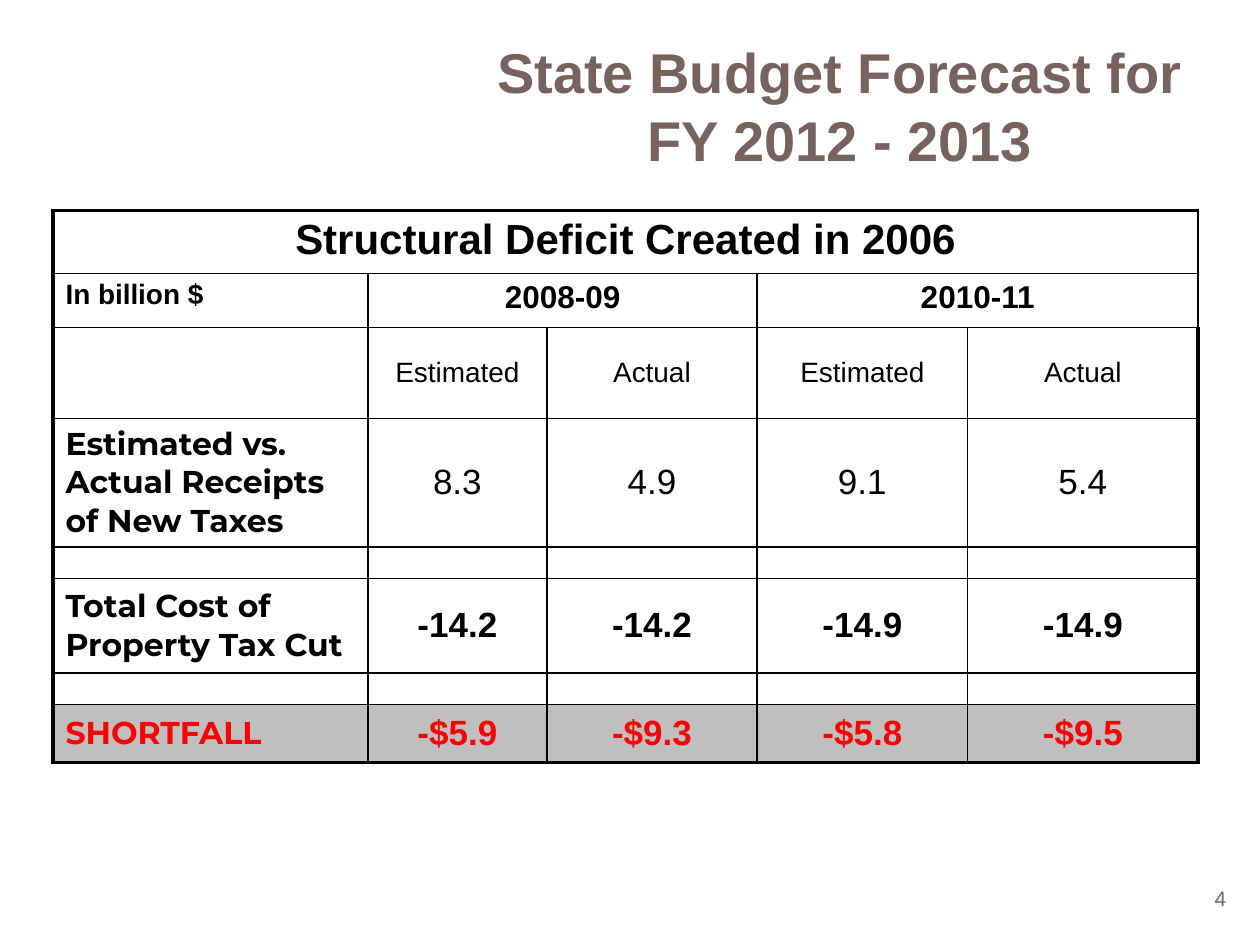
from lxml import etree
from pptx import Presentation
from pptx.dml.color import RGBColor
from pptx.enum.text import MSO_ANCHOR, PP_ALIGN
from pptx.oxml.ns import qn
from pptx.util import Inches, Pt

LEFT, CENTER, RIGHT = PP_ALIGN.LEFT, PP_ALIGN.CENTER, PP_ALIGN.RIGHT
TOP, MIDDLE = MSO_ANCHOR.TOP, MSO_ANCHOR.MIDDLE
BROWN, BLACK, RED, GRAY = "78625E", "000000", "FF0000", "BFBFBF"
THIN, THICK = 1, 2.25

TITLE = "State Budget Forecast for\vFY 2012 - 2013"
PAGE_NUMBER = "4"
ROWS = [
    ["Structural Deficit Created in 2006", "", "", "", ""],
    ["In billion $", "2008-09", "", "2010-11", ""],
    ["", "Estimated", "Actual", "Estimated", "Actual"],
    ["Estimated vs. Actual Receipts of New Taxes", "8.3", "4.9", "9.1", "5.4"],
    [""] * 5,
    ["Total Cost of Property Tax Cut", "-14.2", "-14.2", "-14.9", "-14.9"],
    [""] * 5,
    ["SHORTFALL", "-$5.9", "-$9.3", "-$5.8", "-$9.5"],
]
MERGES = [((0, 0), (0, 4)), ((1, 1), (1, 2)), ((1, 3), (1, 4))]
COLUMN_WIDTHS = [2.5, 1.42, 1.67, 1.67, 1.83]
ROW_HEIGHTS = [0.47, 0.43, 0.72, 1.02, 0.25, 0.75, 0.25, 0.46]
LAST_ROW, LAST_COLUMN = len(ROWS) - 1, len(COLUMN_WIDTHS) - 1
VALUE_SIZES = [24, 18, 16, 20, 20, 20, 20, 20]
LABEL_SIZES = [24, 16, 16, 18, 18, 18, 18, 18]
REGULAR_ROWS = (2, 3)
EMPTY_SIZE = 8


def color(value):
    return RGBColor.from_string(value)


def write(text_frame, text, size, shade, font="Arial", bold=False, align=LEFT):
    text_frame.text = text
    paragraph = text_frame.paragraphs[0]
    paragraph.alignment = align
    for run in paragraph.runs:
        run.font.name = font
        run.font.size = Pt(size)
        run.font.bold = bold
        run.font.color.rgb = color(shade)
    if not text:
        etree.SubElement(paragraph._p, qn("a:endParaRPr"), sz=str(EMPTY_SIZE * 100))


def add_text(slide, box, anchor, *style, **options):
    text_frame = slide.shapes.add_textbox(*map(Inches, box)).text_frame
    text_frame.word_wrap = True
    text_frame.vertical_anchor = anchor
    write(text_frame, *style, **options)


def set_borders(cell, row, column):
    outer = {"L": column == 0, "R": column == LAST_COLUMN,
             "T": row == 0, "B": row == LAST_ROW}
    properties = cell._tc.get_or_add_tcPr()
    for position, (side, is_outer) in enumerate(outer.items()):
        width = Pt(THICK if is_outer else THIN)
        line = etree.Element(qn(f"a:ln{side}"), w=str(int(width)))
        fill = etree.SubElement(line, qn("a:solidFill"))
        etree.SubElement(fill, qn("a:srgbClr"), val=BLACK)
        properties.insert(position, line)


def fill_cell(cell, row, column, text):
    is_label = column == 0 and row > 0
    write(
        cell.text_frame, text,
        (LABEL_SIZES if is_label else VALUE_SIZES)[row],
        RED if row == LAST_ROW else BLACK,
        font="Montserrat" if is_label and row > 2 else "Arial",
        bold=is_label or row not in REGULAR_ROWS,
        align=LEFT if is_label else CENTER,
    )
    cell.vertical_anchor = MIDDLE if row > 1 else TOP
    if row == LAST_ROW:
        cell.fill.solid()
        cell.fill.fore_color.rgb = color(GRAY)
    else:
        cell.fill.background()
    set_borders(cell, row, column)


def add_budget_table(slide):
    table = slide.shapes.add_table(
        len(ROWS), len(COLUMN_WIDTHS), Inches(0.42), Inches(1.67),
        Inches(sum(COLUMN_WIDTHS)), Inches(sum(ROW_HEIGHTS))).table
    table.first_row = table.horz_banding = False
    for column, width in zip(table.columns, COLUMN_WIDTHS):
        column.width = Inches(width)
    for row, height in zip(table.rows, ROW_HEIGHTS):
        row.height = Inches(height)
    for row, texts in enumerate(ROWS):
        for column, text in enumerate(texts):
            fill_cell(table.cell(row, column), row, column, text)
    for first, last in MERGES:
        table.cell(*first).merge(table.cell(*last))


def main():
    presentation = Presentation()
    presentation.slide_width, presentation.slide_height = Inches(10), Inches(7.5)
    slide = presentation.slides.add_slide(presentation.slide_layouts[6])
    add_text(slide, (3.58, 0.17, 6.17, 1.33), MIDDLE,
             TITLE, 32, BROWN, bold=True, align=CENTER)
    add_budget_table(slide)
    add_text(slide, (7.5, 6.98, 2.33, 0.43), TOP,
             PAGE_NUMBER, 12, BROWN, align=RIGHT)
    presentation.save("out.pptx")


if __name__ == "__main__":
    main()
